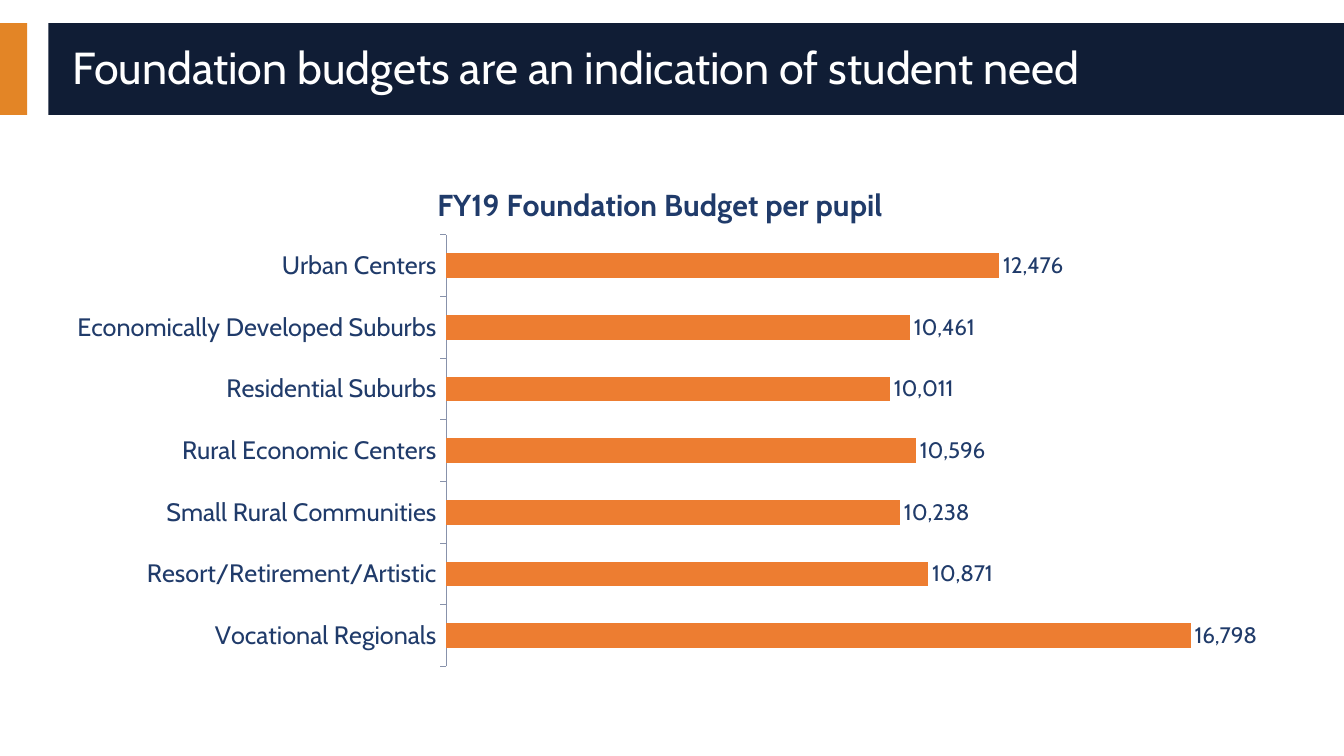
from lxml import etree
from pptx import Presentation
from pptx.chart.data import CategoryChartData
from pptx.dml.color import RGBColor
from pptx.enum.chart import XL_CHART_TYPE, XL_LABEL_POSITION, XL_TICK_LABEL_POSITION, XL_TICK_MARK
from pptx.enum.shapes import MSO_SHAPE
from pptx.enum.text import MSO_ANCHOR, PP_ALIGN
from pptx.oxml.ns import qn
from pptx.util import Inches, Pt

RECT = MSO_SHAPE.RECTANGLE
MIDDLE, LEFT = MSO_ANCHOR.MIDDLE, PP_ALIGN.LEFT
BAR, OUTSIDE_END = XL_CHART_TYPE.BAR_CLUSTERED, XL_LABEL_POSITION.OUTSIDE_END
OUT, LOW = XL_TICK_MARK.OUTSIDE, XL_TICK_LABEL_POSITION.LOW

AMBER = RGBColor(0xE3, 0x85, 0x26)
NAVY = RGBColor(0x10, 0x1D, 0x35)
BLUE = RGBColor(0x20, 0x3B, 0x6A)
ORANGE = RGBColor(0xED, 0x7D, 0x31)
AXIS = RGBColor(0x88, 0x92, 0xAB)
WHITE = RGBColor(0xFF, 0xFF, 0xFF)
FONT = "Cabin"

BUDGETS = {
    "Urban Centers": 12476,
    "Economically Developed Suburbs": 10461,
    "Residential Suburbs": 10011,
    "Rural Economic Centers": 10596,
    "Small Rural Communities": 10238,
    "Resort/Retirement/Artistic": 10871,
    "Vocational Regionals": 16798,
}


def set_font(font, size, color, bold=False):
    values = {"name": FONT, "size": Pt(size), "bold": bold}
    for name, value in values.items():
        setattr(font, name, value)
    font.color.rgb = color


prs = Presentation()
prs.slide_width, prs.slide_height = Inches(13.33), Inches(7.5)
s = prs.slides.add_slide(prs.slide_layouts[5])

# Header bands
for left, width, color in ((0, 0.27, AMBER), (0.48, 12.85, NAVY)):
    sp = s.shapes.add_shape(RECT, Inches(left), Inches(0.23), Inches(width), Inches(0.91))
    sp.shadow.inherit = False
    sp.fill.solid()
    sp.fill.fore_color.rgb = color
    sp.line.fill.background()

# Title, in front of the bands
title = s.shapes.title
box = {"left": 0.62, "top": 0.32, "width": 12.44, "height": 0.74}
for name, value in box.items():
    setattr(title, name, Inches(value))
s.shapes._spTree.append(title._element)
tf = title.text_frame
tf.text = "Foundation budgets are an indication of student need"
tf.vertical_anchor = MIDDLE
p = tf.paragraphs[0]
p.alignment, p.line_spacing = LEFT, 0.9
set_font(p.runs[0].font, 32, WHITE)

# Budget chart
data = CategoryChartData(number_format="#,##0")
data.categories = list(BUDGETS)
data.add_series("Series 1", list(BUDGETS.values()))
chart = s.shapes.add_chart(
    BAR, Inches(0.52), Inches(1.61), Inches(12.06), Inches(5.11), data).chart
set_font(chart.font, 18, BLUE)
chart.has_legend = False
chart.has_title = True
tf = chart.chart_title.text_frame
tf.text = "FY19 Foundation Budget per pupil"
set_font(tf.paragraphs[0].runs[0].font, 21.6, BLUE, bold=True)
chart.chart_title.include_in_layout = False

# Bars and value labels
plot = chart.plots[0]
plot.gap_width, plot.vary_by_categories = 150, False
fill = plot.series[0].format.fill
fill.solid()
fill.fore_color.rgb = ORANGE
plot.has_data_labels = True
labels = plot.data_labels
label_format = {"show_value": True, "number_format": "#,##0",
                "number_format_is_linked": False, "position": OUTSIDE_END}
for name, value in label_format.items():
    setattr(labels, name, value)
set_font(labels.font, 16, BLUE)

# Axes
cat, val = chart.category_axis, chart.value_axis
cat.reverse_order = True
cat.has_major_gridlines = val.has_major_gridlines = False
cat.major_tick_mark, cat.tick_label_position = OUT, LOW
cat.format.line.color.rgb = AXIS
cat.format.line.width = Pt(0.75)
val.minimum_scale, val.maximum_scale = 0, 18000
val.visible = False

# Plot area as shares of the chart
area = chart._chartSpace.chart.plotArea
for old in area.findall(qn("c:layout")):
    area.remove(old)
layout = etree.Element(qn("c:layout"))
manual = etree.SubElement(layout, qn("c:manualLayout"))
shares = {"layoutTarget": "inner", "xMode": "edge", "yMode": "edge",
          "x": 0.324, "y": 0.141, "w": 0.656, "h": 0.838}
for name, value in shares.items():
    etree.SubElement(manual, qn("c:" + name)).set("val", str(value))
area.insert(0, layout)

prs.save("out.pptx")
